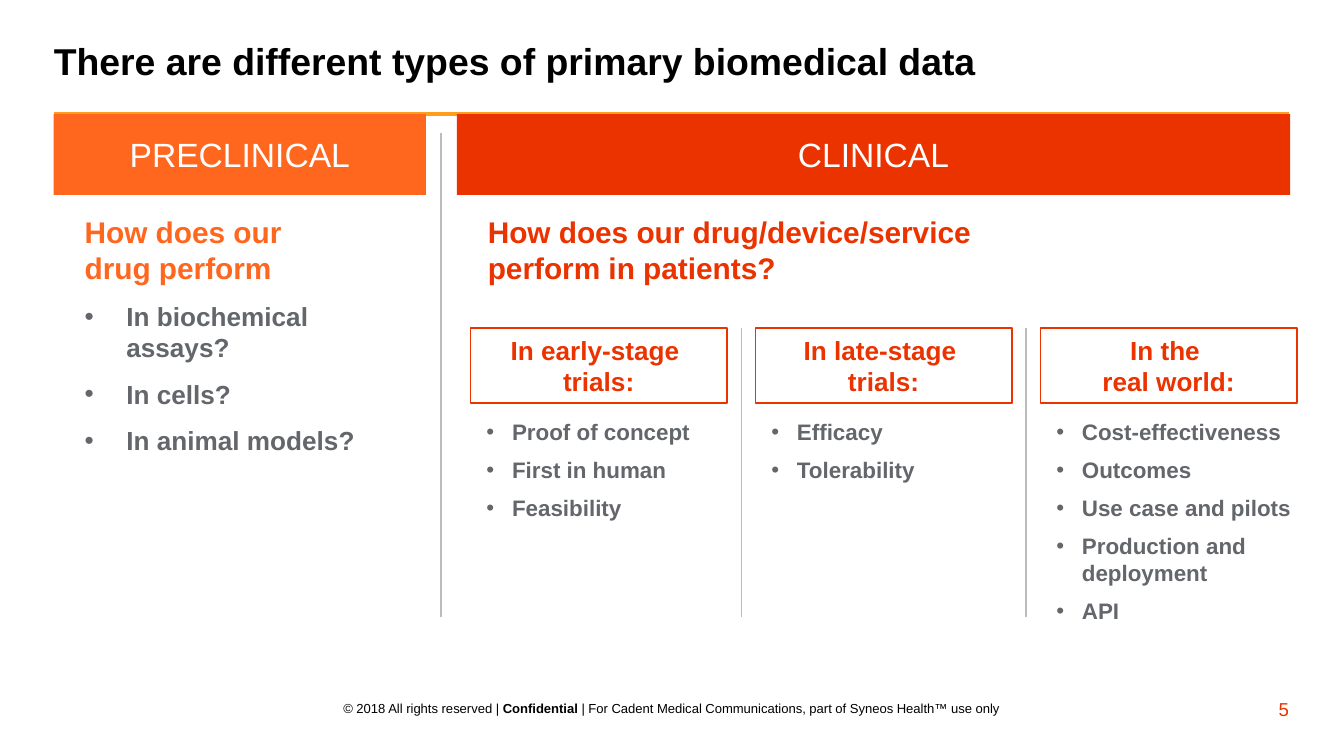
from copy import deepcopy
from dataclasses import dataclass

from lxml import etree
from pptx import Presentation
from pptx import util as u
from pptx.dml.color import RGBColor
from pptx.enum import shapes, text
from pptx.oxml.ns import qn

BLACK = RGBColor(0x00, 0x00, 0x00)
WHITE = RGBColor(0xFF, 0xFF, 0xFF)
ORANGE = RGBColor(0xFF, 0x67, 0x1F)
RED = RGBColor(0xEB, 0x33, 0x00)
AMBER = RGBColor(0xFF, 0x9E, 0x1B)
GREY = RGBColor(0x63, 0x66, 0x6A)
SILVER = RGBColor(0xBB, 0xBC, 0xBC)

WIDTH = 10
HEIGHT = WIDTH * 9 / 16
LEFT, RIGHT = 0.4, 9.59
BAR_TOP, BAR_HEIGHT = 0.85, 0.6
QUESTION_TOP = 1.59
STAGE_LEFT, STAGE_PITCH, STAGE_WIDTH = 3.5, 2.12, 1.91
STAGE_TOP, STAGE_HEIGHT = 2.44, 0.56
LIST_TOP, DIVIDER_BOTTOM = 3.11, 4.59

LEFT_ALIGN, CENTER, RIGHT_ALIGN = (
    text.PP_ALIGN.LEFT, text.PP_ALIGN.CENTER, text.PP_ALIGN.RIGHT)
TOP, MIDDLE = text.MSO_ANCHOR.TOP, text.MSO_ANCHOR.MIDDLE


@dataclass(frozen=True)
class Box:
    left: float
    top: float
    width: float
    height: float

    def lengths(self):
        return [u.Inches(v) for v in (self.left, self.top, self.width, self.height)]


@dataclass(frozen=True)
class Style:
    size: float
    color: RGBColor
    bold: bool = False
    align: text.PP_ALIGN = LEFT_ALIGN
    before: float = 0
    after: float = 0
    spacing: float = 1.0
    hanging: float = 0  # depth of the bullet's hanging indent


@dataclass(frozen=True)
class Stage:
    heading: str
    items: tuple[str, ...]
    list_height: float = 1.3


TITLE = Style(20, BLACK, True, spacing=0.85)
BAR = Style(18, WHITE, align=CENTER)
STAGE_HEADING = Style(14, RED, True, CENTER)
QUESTION_ITEM = Style(14, GREY, True, before=4, after=4, hanging=0.31)
STAGE_ITEM = Style(12, GREY, True, before=6, hanging=0.19)
FOOTER = Style(7, BLACK, align=CENTER)
PAGE_NUMBER = Style(10, RED, align=RIGHT_ALIGN)

STAGES = (
    Stage("In early-stage \vtrials:",
          ("Proof of concept", "First in human", "Feasibility")),
    Stage("In late-stage \vtrials:", ("Efficacy", "Tolerability")),
    Stage("In the \vreal world:",
          ("Cost-effectiveness", "Outcomes", "Use case and pilots",
           "Production and deployment", "API"), 1.88),
)


def question(color: RGBColor) -> Style:
    return Style(16, color, True, after=4)


def set_bullet(paragraph, hanging: float) -> None:
    properties = paragraph._p.get_or_add_pPr()
    properties.set("marL", str(u.Inches(0.31 if hanging else 0)))
    properties.set("indent", str(u.Inches(-hanging)))
    if hanging:
        etree.SubElement(properties, qn("a:buFont"), typeface="Arial")
        etree.SubElement(properties, qn("a:buChar"), char="•")
    else:
        etree.SubElement(properties, qn("a:buNone"))


def format_runs(paragraph, style: Style) -> None:
    values = {"name": "Arial", "size": u.Pt(style.size), "bold": style.bold}
    for run in paragraph.runs:
        for name, value in values.items():
            setattr(run.font, name, value)
        run.font.color.rgb = style.color
    # A line break takes the size of the text around it.
    for line_break in paragraph._p.findall(qn("a:br")):
        line_break.insert(0, deepcopy(paragraph.runs[0]._r.rPr))


def write(shape, lines: list[tuple[str, Style]], anchor=TOP,
          wrap: bool = True, inset: float = 0) -> None:
    """Fill a shape with one paragraph for each line and its style."""
    frame = shape.text_frame
    values = {"auto_size": text.MSO_AUTO_SIZE.NONE, "word_wrap": wrap,
              "vertical_anchor": anchor}
    values |= {f"margin_{side}": u.Inches(inset)
               for side in ("left", "top", "right", "bottom")}
    for name, value in values.items():
        setattr(frame, name, value)
    for index, (line, style) in enumerate(lines):
        paragraph = frame.add_paragraph() if index else frame.paragraphs[0]
        paragraph.text = line
        values = {"alignment": style.align, "line_spacing": style.spacing,
                  "space_before": u.Pt(style.before if index else 0),
                  "space_after": u.Pt(style.after)}
        for name, value in values.items():
            setattr(paragraph, name, value)
        set_bullet(paragraph, style.hanging)
        format_runs(paragraph, style)


def place(shape, box: Box):
    shape.left, shape.top, shape.width, shape.height = box.lengths()
    return shape


def add_text(slide, box: Box, line: str, style: Style, anchor=TOP):
    shape = slide.shapes.add_textbox(*box.lengths())
    write(shape, [(line, style)], anchor)
    return shape


def add_rectangle(slide, box: Box, fill=None, line=None):
    shape = slide.shapes.add_shape(shapes.MSO_SHAPE.RECTANGLE, *box.lengths())
    shape.shadow.inherit = False
    for part, color in ((shape.fill, fill), (shape.line.fill, line)):
        if color is None:
            part.background()
        else:
            part.solid()
            part.fore_color.rgb = color
    if line is not None:
        shape.line.width = u.Pt(0.75)
    return shape


def add_line(slide, start: tuple[float, float], end: tuple[float, float],
             color: RGBColor, width: float) -> None:
    line = slide.shapes.add_connector(
        shapes.MSO_CONNECTOR.STRAIGHT, *map(u.Inches, start + end))
    line.line.color.rgb = color
    line.line.width = u.Pt(width)
    etree.SubElement(line._element.spPr, qn("a:effectLst"))


def add_divider(slide, x: float, top: float) -> None:
    add_line(slide, (x, top), (x, DIVIDER_BOTTOM), SILVER, 0.75)


def add_footer(slide) -> None:
    parts = ("© 2018 All rights reserved | ", "Confidential",
             " | For Cadent Medical Communications, part of Syneos Health™ use only")
    shape = add_text(slide, Box(2.54, 5.16, 4.91, 0.22), parts[0], FOOTER, MIDDLE)
    paragraph = shape.text_frame.paragraphs[0]
    for part in parts[1:]:
        paragraph.add_run().text = part
    format_runs(paragraph, FOOTER)
    paragraph.runs[1].font.bold = True
    add_text(slide, Box(9.18, 5.19, 0.41, 0.17), "5", PAGE_NUMBER, MIDDLE)


def main() -> None:
    presentation = Presentation()
    presentation.slide_width = u.Inches(WIDTH)
    presentation.slide_height = u.Inches(HEIGHT)
    # The comparison layout offers a title and four body placeholders.
    slide = presentation.slides.add_slide(presentation.slide_layouts[4])
    title, preclinical, *stage_lists = slide.placeholders

    write(place(title, Box(LEFT, 0.1, RIGHT - LEFT, 0.75)),
          [("There are different types of primary biomedical data", TITLE)], MIDDLE)
    add_line(slide, (LEFT, BAR_TOP), (RIGHT, BAR_TOP), AMBER, 2)
    for label, left, width, color in (("PRECLINICAL", LEFT, 2.77, ORANGE),
                                      ("CLINICAL", 3.4, 6.2, RED)):
        bar = add_rectangle(slide, Box(left, BAR_TOP, width, BAR_HEIGHT), fill=color)
        write(bar, [(label, BAR)], MIDDLE)

    items = ("In biochemical assays?", "In cells?", "In animal models?")
    write(place(preclinical, Box(0.63, QUESTION_TOP, 2.3, 1.41)),
          [("How does our \vdrug perform", question(ORANGE))]
          + [(item, QUESTION_ITEM) for item in items])
    add_text(slide, Box(3.63, QUESTION_TOP, 3.74, 1.41),
             "How does our drug/device/service perform in patients?", question(RED))
    add_divider(slide, 3.28, 0.99)

    for column, (stage, stage_list) in enumerate(zip(STAGES, stage_lists)):
        left = STAGE_LEFT + column * STAGE_PITCH
        heading = add_rectangle(
            slide, Box(left, STAGE_TOP, STAGE_WIDTH, STAGE_HEIGHT), line=RED)
        write(heading, [(stage.heading, STAGE_HEADING)], MIDDLE, wrap=False, inset=0.05)
        write(place(stage_list, Box(left, LIST_TOP, STAGE_WIDTH, stage.list_height)),
              [(item, STAGE_ITEM) for item in stage.items])
        if column:
            add_divider(slide, left - (STAGE_PITCH - STAGE_WIDTH) / 2, STAGE_TOP)

    add_footer(slide)
    presentation.save("out.pptx")


if __name__ == "__main__":
    main()
